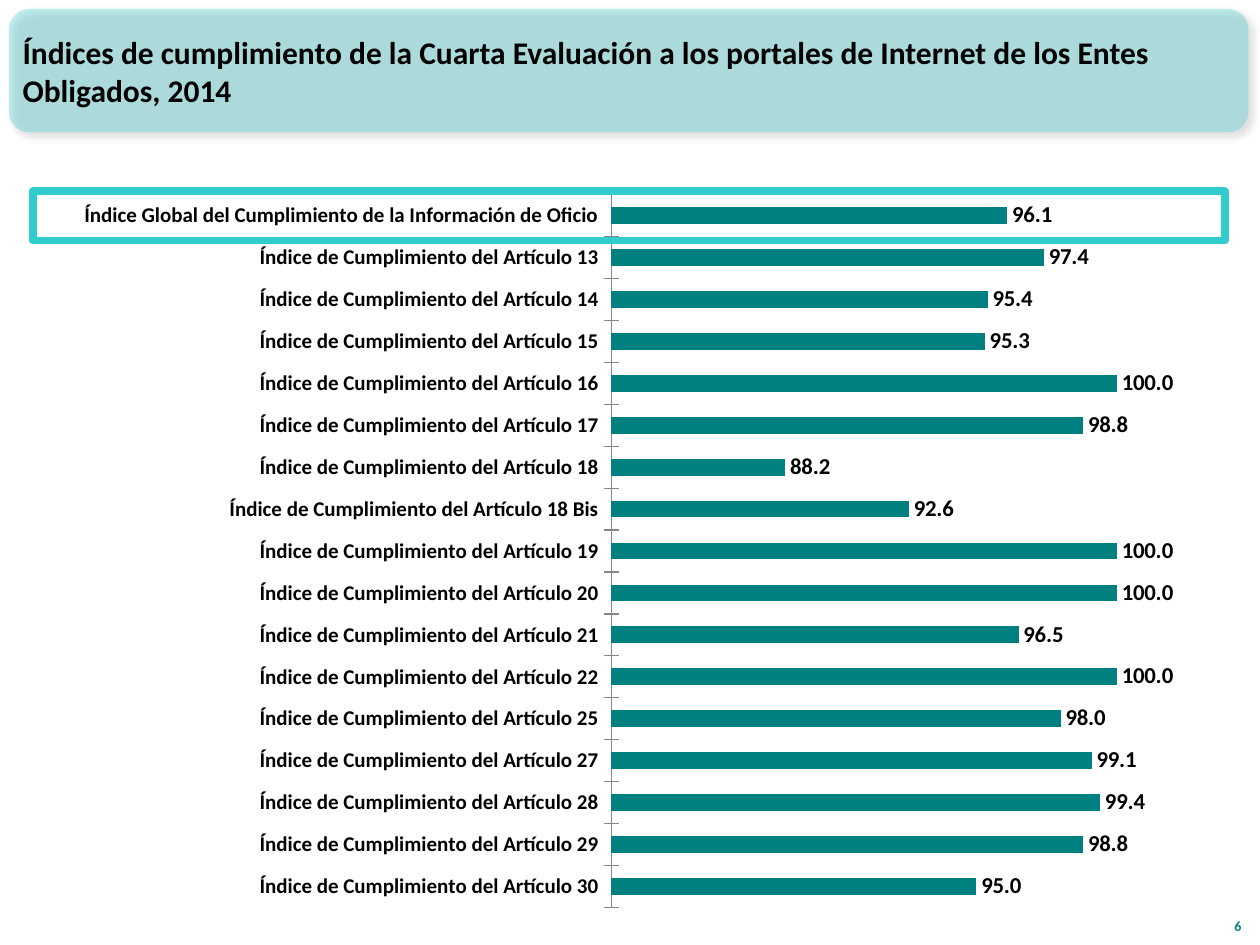
from lxml import etree
from pptx import Presentation
from pptx import util as u
from pptx.chart.data import CategoryChartData
from pptx.dml.color import RGBColor
from pptx.enum import chart as charts, shapes, text
from pptx.oxml import parse_xml
from pptx.oxml.ns import nsdecls, qn

COLORS = {"teal": "008080", "aqua": "33CCCC", "black": "000000", "axis": "868686"}
FONT = "Calibri"
TITLE = ("Índices de cumplimiento de la Cuarta Evaluación a los portales de "
         "Internet de los Entes Obligados, 2014")
GLOBAL_INDEX = ("Índice Global del Cumplimiento de la Información de Oficio", 96.1)
ARTICLES = {
    "13": 97.4, "14": 95.4, "15": 95.3, "16": 100, "17": 98.8, "18": 88.2,
    "18 Bis": 92.6, "19": 100, "20": 100, "21": 96.5, "22": 100, "25": 98,
    "27": 99.1, "28": 99.4, "29": 98.8, "30": 95,
}
PLOT = {"x": 0.482, "y": 0.021, "w": 0.448, "h": 0.952}


def color(name):
    return RGBColor.from_string(COLORS[name])


def style_font(font, size, name="black"):
    font.name = FONT
    font.size = u.Pt(size)
    font.bold = True
    font.color.rgb = color(name)


def place(item, left, top, width, height):
    item.left, item.top = u.Cm(left), u.Cm(top)
    item.width, item.height = u.Cm(width), u.Cm(height)


def write(box, words, size, name, align, anchor):
    frame = box.text_frame
    frame.word_wrap = True
    frame.auto_size = text.MSO_AUTO_SIZE.NONE
    frame.vertical_anchor = anchor
    para = frame.paragraphs[0]
    para.text = words
    para.alignment = align
    para.line_spacing = 1.0
    style_font(para.font, size, name)


def add_band(page):
    band = page.shapes.add_shape(shapes.MSO_SHAPE.ROUNDED_RECTANGLE, 0, 0, 0, 0)
    place(band, 0.18, 0.18, 24.99, 2.49)
    band.fill.solid()
    band.fill.fore_color.rgb = color("aqua")
    band.line.fill.background()
    tint = band.fill._xPr.find(qn("a:solidFill"))[0]
    etree.SubElement(tint, qn("a:alpha")).set("val", "30000")
    band._element.spPr.append(parse_xml(
        f'<a:effectLst {nsdecls("a")}>'
        f'<a:outerShdw blurRad="{u.Pt(4)}" dist="{u.Pt(3)}" dir="2700000" '
        'algn="tl" rotWithShape="0"><a:srgbClr val="000000">'
        '<a:alpha val="40000"/></a:srgbClr></a:outerShdw></a:effectLst>'))


def add_title(page):
    title = page.shapes.title
    place(title, 0.2, 0.23, 23.29, 2.39)
    write(title, TITLE, 18, "black", text.PP_ALIGN.LEFT, text.MSO_ANCHOR.MIDDLE)
    page.shapes._spTree.append(title._element)


def add_page_number(page, number):
    box = page.shapes.add_textbox(0, 0, 0, 0)
    place(box, 24.26, 17.93, 1.02, 1.02)
    write(box, str(number), 8, "teal", text.PP_ALIGN.RIGHT, text.MSO_ANCHOR.BOTTOM)


def set_plot_layout(chart):
    modes = "".join(f'<c:{side}Mode val="edge"/>' for side in "xy")
    sizes = "".join(f'<c:{side} val="{share}"/>' for side, share in PLOT.items())
    area = chart._chartSpace.chart.plotArea
    for old in area.findall(qn("c:layout")):
        area.remove(old)
    area.insert(0, parse_xml(
        f'<c:layout {nsdecls("c")}><c:manualLayout><c:layoutTarget val="inner"/>'
        f'{modes}{sizes}</c:manualLayout></c:layout>'))


def add_index_chart(page):
    table = CategoryChartData(number_format="0.0")
    table.categories = [GLOBAL_INDEX[0]] + [
        f"Índice de Cumplimiento del Artículo {article}" for article in ARTICLES]
    table.add_series("Series 1", [GLOBAL_INDEX[1], *ARTICLES.values()])
    chart = page.shapes.add_chart(
        charts.XL_CHART_TYPE.BAR_CLUSTERED,
        u.Cm(1.35), u.Cm(3.61), u.Cm(22.76), u.Cm(15.09), table).chart
    chart.has_legend = False
    chart.has_title = False
    style_font(chart.font, 13)
    set_plot_layout(chart)

    names = chart.category_axis
    names.reverse_order = True
    names.major_tick_mark = charts.XL_TICK_MARK.CROSS
    names.format.line.color.rgb = color("axis")
    style_font(names.tick_labels.font, 12)

    scale = chart.value_axis
    scale.minimum_scale, scale.maximum_scale = 82, 100
    scale.has_major_gridlines = False
    scale.visible = False

    plot = chart.plots[0]
    plot.gap_width, plot.overlap = 150, -25
    plot.vary_by_categories = False
    bars = plot.series[0]
    bars.format.fill.solid()
    bars.format.fill.fore_color.rgb = color("teal")
    labels = bars.data_labels
    labels.show_value = True
    labels.position = charts.XL_LABEL_POSITION.OUTSIDE_END
    labels.number_format = "0.0"
    labels.number_format_is_linked = False
    style_font(labels.font, 13)


def add_highlight(page):
    frame = page.shapes.add_shape(shapes.MSO_SHAPE.RECTANGLE, 0, 0, 0, 0)
    place(frame, 0.66, 3.86, 24.03, 0.99)
    frame.shadow.inherit = False
    frame.fill.background()
    frame.line.color.rgb = color("aqua")
    frame.line.width = u.Pt(4.5)
    etree.SubElement(frame.line._ln, qn("a:round"))


def main():
    deck = Presentation()
    deck.slide_width, deck.slide_height = u.Cm(25.4), u.Cm(19.05)
    page = deck.slides.add_slide(deck.slide_layouts[5])
    add_band(page)
    add_page_number(page, 6)
    add_index_chart(page)
    add_highlight(page)
    add_title(page)
    deck.save("out.pptx")


if __name__ == "__main__":
    main()
